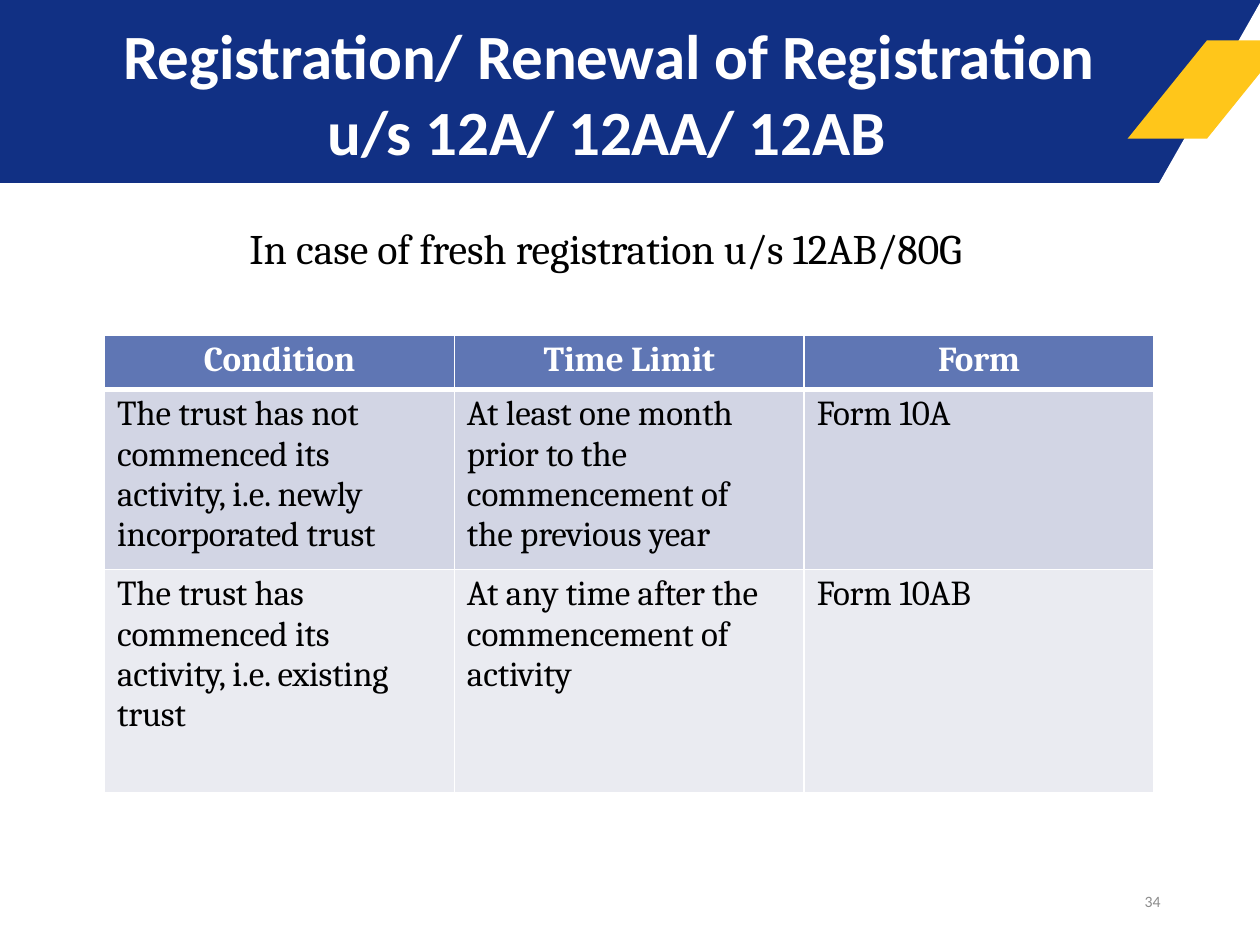
from dataclasses import dataclass

from lxml import etree
from pptx import Presentation
from pptx.dml.color import RGBColor
from pptx.enum import text
from pptx.oxml import ns
from pptx.util import Inches, Pt

COLOURS = {
    "navy": "113084",
    "yellow": "FFC61A",
    "white": "FFFFFF",
    "black": "000000",
    "grey": "8C8C8C",
    "header": "5F76B4",
    "band_dark": "D2D5E4",
    "band_light": "EAEBF1",
}
LEFT, CENTER, RIGHT = text.PP_ALIGN.LEFT, text.PP_ALIGN.CENTER, text.PP_ALIGN.RIGHT


@dataclass
class Outline:
    points: list[tuple[float, float]]
    colour: str


@dataclass
class Style:
    font: str
    size: float
    colour: str
    bold: bool = False
    align: int = LEFT
    spacing: int = 0
    before: float = 0
    left: float = 0
    hanging: float = 0
    right: float = 0


@dataclass
class Label:
    words: str
    frame: tuple[float, float, float, float]
    style: Style
    insets: tuple[float, float, float, float]
    anchor: int = text.MSO_ANCHOR.TOP


@dataclass
class Row:
    cells: tuple[str, str, str]
    height: float
    fill: str
    style: Style
    top_line: float
    bottom_line: float


def colour(name: str) -> RGBColor:
    return RGBColor.from_string(COLOURS[name])


def slanted(left: float, top: float, width: float, height: float, slant: float) -> list[tuple[float, float]]:
    return [
        (left + slant, top),
        (left + slant + width, top),
        (left + width, top + height),
        (left, top + height),
    ]


def draw_outline(page, outline: Outline) -> None:
    points = [(Inches(x), Inches(y)) for x, y in outline.points]
    builder = page.shapes.build_freeform(*points[0], scale=1.0)
    builder.add_line_segments(points[1:], close=True)
    shape = builder.convert_to_shape()
    shape.shadow.inherit = False
    shape.fill.solid()
    shape.fill.fore_color.rgb = colour(outline.colour)
    shape.line.fill.background()


def write(frame, words: str, style: Style) -> None:
    frame.text = words
    para = frame.paragraphs[0]
    para.alignment = style.align
    para.space_before = Pt(style.before)
    properties = para._p.get_or_add_pPr()
    for key, length in (("marL", style.left), ("marR", style.right), ("indent", style.hanging)):
        properties.set(key, str(Inches(length)))
    for span in para.runs:
        span.font.name = style.font
        span.font.size = Pt(style.size)
        span.font.bold = style.bold
        span.font.color.rgb = colour(style.colour)
        span._r.get_or_add_rPr().set("spc", str(style.spacing))


def draw_label(page, label: Label) -> None:
    box = page.shapes.add_textbox(*map(Inches, label.frame))
    frame = box.text_frame
    frame.word_wrap = True
    frame.vertical_anchor = label.anchor
    frame.margin_left, frame.margin_top, frame.margin_right, frame.margin_bottom = map(Inches, label.insets)
    write(frame, label.words, label.style)


def draw_border(cell, side: str, width: float) -> None:
    properties = cell._tc.get_or_add_tcPr()
    line = etree.SubElement(properties, ns.qn(f"a:ln{side}"), w=str(Pt(width)))
    fill = etree.SubElement(line, ns.qn("a:solidFill"))
    etree.SubElement(fill, ns.qn("a:srgbClr"), val=COLOURS["white"])


def draw_table(page, rows: list[Row], left: float, top: float, width: float) -> None:
    columns = len(rows[0].cells)
    height = sum(row.height for row in rows)
    table = page.shapes.add_table(len(rows), columns, *map(Inches, (left, top, width, height))).table
    for column in table.columns:
        column.width = Inches(width / columns)
    for row_index, row in enumerate(rows):
        table.rows[row_index].height = Inches(row.height)
        for column_index, words in enumerate(row.cells):
            cell = table.cell(row_index, column_index)
            cell.margin_left = cell.margin_right = cell.margin_bottom = 0
            cell.margin_top = Inches(0.04)
            for side, line in (("L", 1), ("R", 1), ("T", row.top_line), ("B", row.bottom_line)):
                draw_border(cell, side, line)
            cell.fill.solid()
            cell.fill.fore_color.rgb = colour(row.fill)
            write(cell.text_frame, words, row.style)


HEADING = Style("Cambria", 20, "white", bold=True, align=CENTER, spacing=-10, before=3)
BODY = Style("Cambria", 20, "black", spacing=-10, before=3.1, left=0.1, right=0.3)

OUTLINES = [
    Outline([(0, 0), (10, 0), (10, 1.45), (0, 1.45)], "navy"),
    Outline(slanted(9.61, -0.4, 1.76, 1.11, 0.63), "white"),
    Outline(slanted(9.11, 0.5, 2.05, 1.11, 0.63), "white"),
    Outline(slanted(8.95, 0.32, 0.63, 0.78, 0.63), "yellow"),
]
LABELS = [
    Label(
        "In case of fresh registration u/s 12AB/80G",
        (1.97, 1.76, 6.06, 0.43),
        Style("Cambria", 24, "black", spacing=-5, before=1, left=0.01),
        (0, 0.01, 0, 0),
    ),
    Label(
        "34",
        (7.06, 6.95, 2.25, 0.4),
        Style("Calibri", 9, "grey", align=RIGHT),
        (0.1, 0.05, 0.1, 0.05),
        text.MSO_ANCHOR.MIDDLE,
    ),
    Label(
        "Registration/ Renewal of Registration u/s 12A/ 12AA/ 12AB",
        (0.58, -0.08, 8.5, 1.42),
        Style("Calibri", 36, "white", bold=True, spacing=-8, before=14.7, left=2.02, hanging=-1.62),
        (0, 0.2, 0, 0),
        text.MSO_ANCHOR.MIDDLE,
    ),
]
ROWS = [
    Row(("Condition", "Time Limit", "Form"), 0.43, "header", HEADING, 1, 3),
    Row(
        (
            "The trust has not commenced its activity, i.e. newly incorporated trust",
            "At least one month prior to the commencement of the previous year",
            "Form 10A",
        ),
        1.43, "band_dark", BODY, 3, 1,
    ),
    Row(
        (
            "The trust has commenced its activity, i.e. existing trust",
            "At any time after the commencement of activity",
            "Form 10AB",
        ),
        1.77, "band_light", BODY, 1, 1,
    ),
]


def main() -> None:
    deck = Presentation()
    deck.slide_width, deck.slide_height = Inches(10), Inches(7.5)
    page = deck.slides.add_slide(deck.slide_layouts[6])
    for outline in OUTLINES:
        draw_outline(page, outline)
    draw_table(page, ROWS, 0.83, 2.66, 8.33)
    for label in LABELS:
        draw_label(page, label)
    deck.save("out.pptx")


if __name__ == "__main__":
    main()
